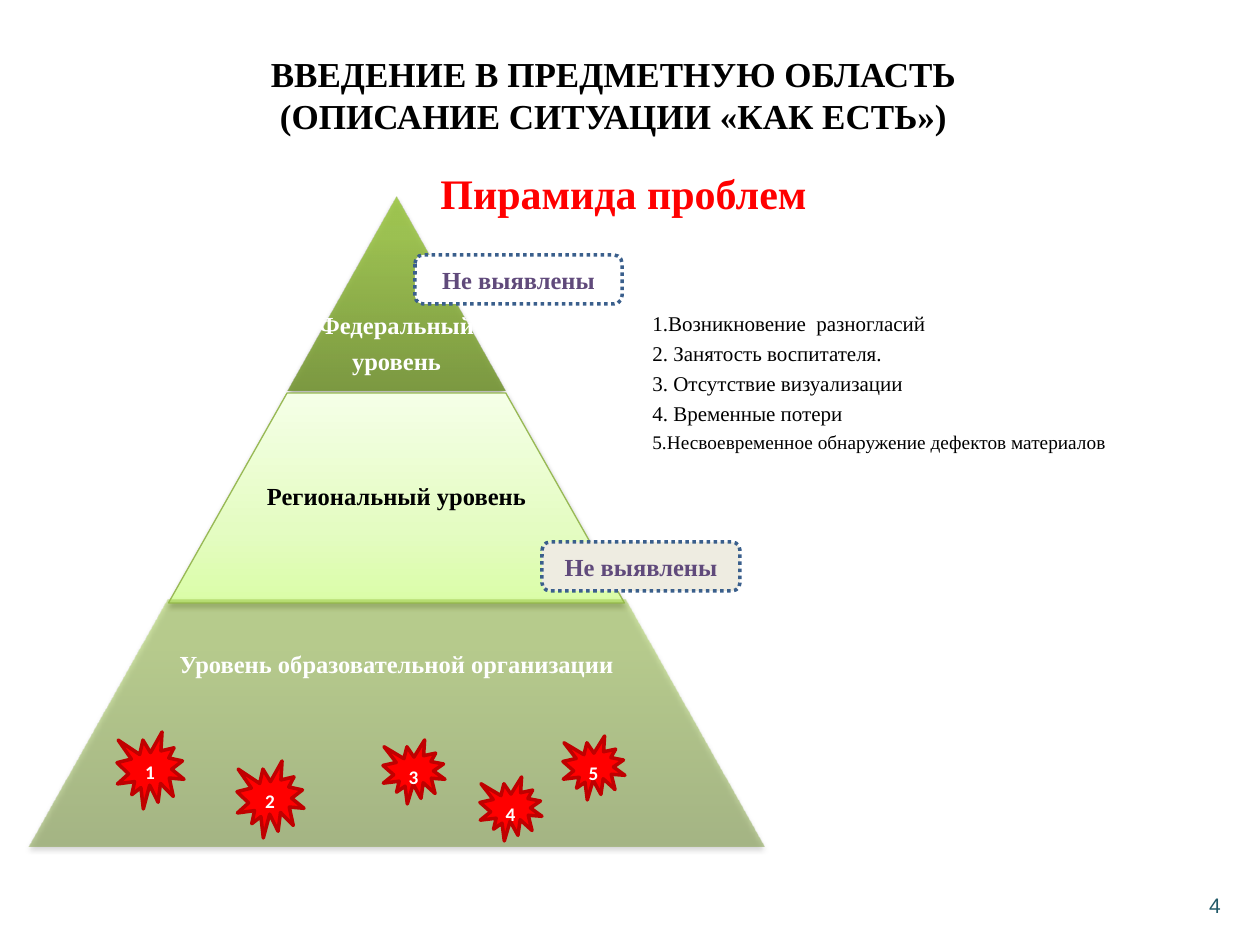
from pptx import Presentation
from pptx.dml.color import RGBColor
from pptx.enum.dml import MSO_LINE
from pptx.enum.shapes import MSO_SHAPE as Shape
from pptx.enum.text import MSO_ANCHOR as Anchor, PP_ALIGN as Align
from pptx.oxml import parse_xml
from pptx.oxml.ns import nsdecls, qn
from pptx.util import Emu, Pt

EMU_PER_PX = 914400 / 126
SERIF, SANS, NUMERAL = "Times New Roman", "Arial", "Calibri"

BLACK = RGBColor(0x00, 0x00, 0x00)
WHITE = RGBColor(0xFF, 0xFF, 0xFF)
RED = RGBColor(0xFF, 0x00, 0x00)
DARK_RED = RGBColor(0xC0, 0x00, 0x00)
TEAL = RGBColor(0x21, 0x59, 0x68)
PURPLE = RGBColor(0x60, 0x4A, 0x7B)
BLUE = RGBColor(0x3A, 0x5F, 0x8C)
CREAM = RGBColor(0xEE, 0xEC, 0xE1)
OLIVE = RGBColor(0x98, 0xB9, 0x55)
GREEN_STOPS = [(0, RGBColor(0x77, 0x97, 0x37)), (80, RGBColor(0x9B, 0xC3, 0x48)),
               (100, RGBColor(0x9D, 0xC7, 0x46))]
PALE_STOPS = [(0, RGBColor(0xDA, 0xFD, 0xA7)), (35, RGBColor(0xE4, 0xFC, 0xC2)),
              (100, RGBColor(0xF5, 0xFF, 0xE7))]


def px(length):
    return Emu(round(length * EMU_PER_PX))


def place(box):
    return [px(length) for length in box]


def write(shape, text, size, color, font=SERIF, bold=True, align=Align.CENTER,
          anchor=Anchor.MIDDLE):
    frame = shape.text_frame
    frame.word_wrap = True
    frame.vertical_anchor = anchor
    frame.text = text
    for paragraph in frame.paragraphs:
        paragraph.alignment = align
        for run in paragraph.runs:
            run.font.name, run.font.size, run.font.bold = font, Pt(size), bold
            run.font.color.rgb = color
    return frame


def add_text(slide, box, text, size, color, **style):
    return write(slide.shapes.add_textbox(*place(box)), text, size, color, **style)


def add_plain_shape(slide, kind, box):
    shape = slide.shapes.add_shape(kind, *place(box))
    shape.shadow.inherit = False
    return shape


def set_gradient(shape, stops, opacity):
    shape.fill.gradient()
    shape.fill.gradient_angle = 90
    stop_list = shape._element.spPr.find(qn("a:gradFill")).find(qn("a:gsLst"))
    for stop in list(stop_list):
        stop_list.remove(stop)
    for position, color in stops:
        stop_list.append(parse_xml(
            f'<a:gs {nsdecls("a")} pos="{position * 1000}"><a:srgbClr val="{color}">'
            f'<a:alpha val="{opacity * 1000}"/></a:srgbClr></a:gs>'))


def set_shadow(shape):
    shape._element.spPr.find(qn("a:effectLst")).append(parse_xml(
        f'<a:outerShdw {nsdecls("a")} blurRad="{Pt(3.1)}" dist="{Pt(1.8)}" '
        f'dir="5400000" rotWithShape="0"><a:srgbClr val="{BLACK}">'
        '<a:alpha val="35000"/></a:srgbClr></a:outerShdw>'))


def add_headings(slide, box):
    left, top, width = box
    add_text(slide, (left + 10, top + 102, width, 76), "Пирамида проблем", 24, RED)
    frame = add_text(slide, (left, top, width, 116),
                     "ВВЕДЕНИЕ В ПРЕДМЕТНУЮ ОБЛАСТЬ\v(ОПИСАНИЕ СИТУАЦИИ «КАК ЕСТЬ»)",
                     20, BLACK, anchor=Anchor.TOP)
    frame.margin_top = 0


def add_tier(slide, box, text, color, stops, opacity, outline, label_share,
             anchor, top_inset, bottom_inset):
    left, top, width, height = box
    tier = add_plain_shape(slide, Shape.TRAPEZOID, box)
    tier.adjustments[0] = 0.565
    set_gradient(tier, stops, opacity)
    if outline is None:
        tier.line.fill.background()
    else:
        tier.line.color.rgb = outline
        tier.line.width = Pt(0.75)
    set_shadow(tier)

    label_width = width * label_share
    label_box = (left + (width - label_width) / 2, top, label_width, height)
    frame = add_text(slide, label_box, text, 14, color, anchor=anchor)
    frame.margin_left = frame.margin_right = px(3)
    frame.margin_top, frame.margin_bottom = px(top_inset), px(bottom_inset)
    for paragraph in frame.paragraphs:
        paragraph.line_spacing = 0.9
    for paragraph in frame.paragraphs[:-1]:
        paragraph.space_after = Pt(5.5)


def add_badge(slide, box, fill):
    badge = add_plain_shape(slide, Shape.ROUNDED_RECTANGLE, box)
    badge.fill.solid()
    badge.fill.fore_color.rgb = fill
    badge.line.color.rgb = BLUE
    badge.line.width = Pt(2)
    badge.line.dash_style = MSO_LINE.ROUND_DOT
    write(badge, "Не выявлены", 14, PURPLE)


def add_burst(slide, box, number):
    burst = add_plain_shape(slide, Shape.EXPLOSION1, box)
    burst.fill.solid()
    burst.fill.fore_color.rgb = RED
    burst.line.color.rgb = DARK_RED
    burst.line.width = Pt(2)
    write(burst, str(number), 11, WHITE, font=NUMERAL, anchor=Anchor.TOP)


def add_pyramid(slide, box):
    left, top, width, height = box
    # Tiers, from the peak down
    tiers = [
        (0, 193, 218, "Федеральный\nуровень", WHITE, GREEN_STOPS, 90, None, 1,
         Anchor.BOTTOM, 3, 14),
        (196, 210, 456, "Региональный уровень", BLACK, PALE_STOPS, 100, OLIVE, 0.65,
         Anchor.MIDDLE, 3, 3),
        (403, height - 403, width, "Уровень образовательной организации", WHITE,
         GREEN_STOPS, 50, None, 0.65, Anchor.TOP, 80, 3),
    ]
    for tier_top, tier_height, tier_width, *style in tiers:
        tier_left = left + (width - tier_width) / 2
        add_tier(slide, (tier_left, top + tier_top, tier_width, tier_height), *style)

    # Marks of the tiers without problems
    add_badge(slide, (left + 513, top + 345, 198, 49), CREAM)
    add_badge(slide, (left + 386, top + 58, 207, 49), WHITE)

    # Numbered problems
    large, small = (67, 77), (62, 64)
    bursts = [(88, 535, large), (208, 564, large), (354, 543, small),
              (451, 580, small), (534, 539, small)]
    for number, (x, y, size) in enumerate(bursts, 1):
        add_burst(slide, (left + x, top + y, *size), number)


def add_problem_list(slide, box):
    problems = [
        "1.Возникновение  разногласий",
        "2. Занятость воспитателя.",
        "3. Отсутствие визуализации",
        "4. Временные потери",
        "5.Несвоевременное обнаружение дефектов материалов",
    ]
    frame = add_text(slide, box, "\n".join(problems), 12, BLACK, bold=False,
                     align=Align.LEFT, anchor=Anchor.TOP)
    for paragraph in frame.paragraphs:
        paragraph.space_before = Pt(2.8)
    frame.paragraphs[-1].runs[0].font.size = Pt(11)


def main():
    presentation = Presentation()
    presentation.slide_width, presentation.slide_height = px(1260), px(945)
    slide = presentation.slides.add_slide(presentation.slide_layouts[6])
    add_headings(slide, (15, 53, 1197))
    add_pyramid(slide, (29, 197, 735, 649))
    add_problem_list(slide, (640, 304, 556, 219))
    # Slide number
    add_text(slide, (1191, 886, 48, 39), "4", 12, TEAL, font=SANS, bold=False)
    presentation.save("out.pptx")


if __name__ == "__main__":
    main()
